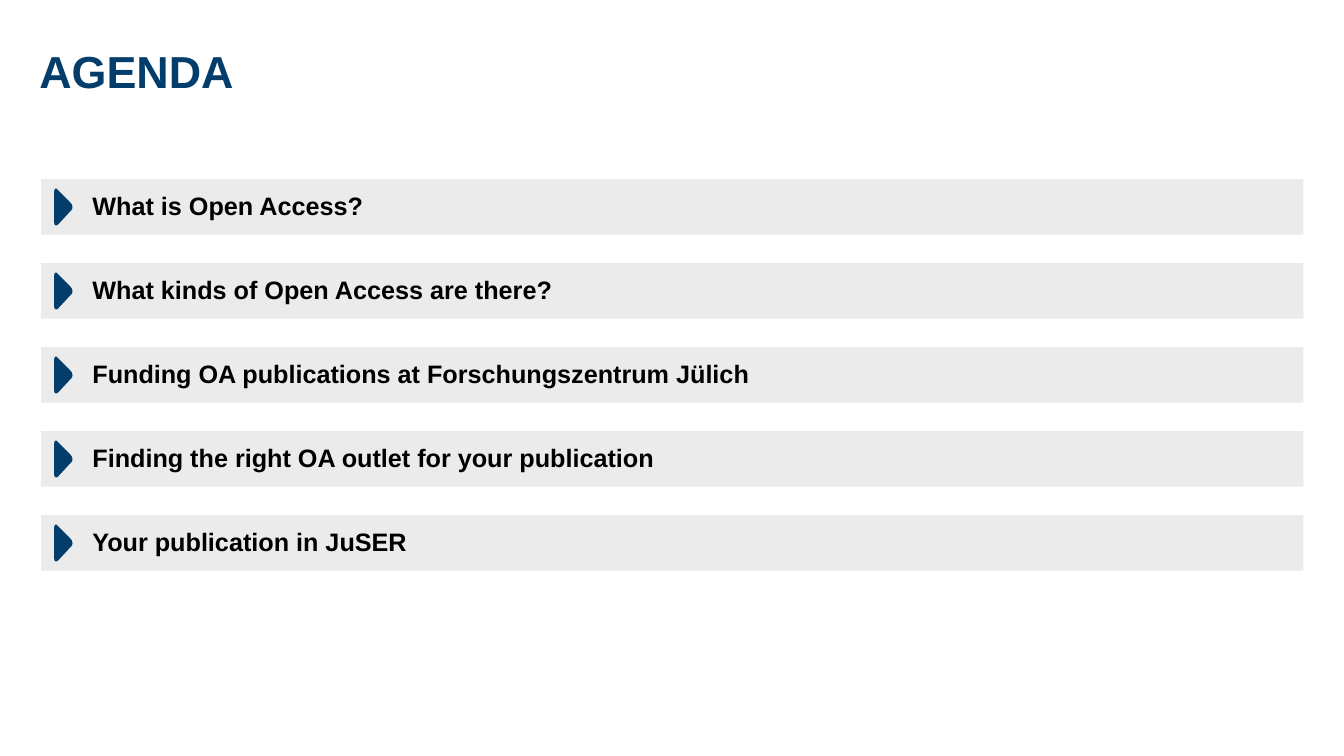
from lxml import etree
from pptx import Presentation
from pptx.dml.color import RGBColor
from pptx.enum.shapes import MSO_SHAPE
from pptx.enum.text import MSO_ANCHOR, PP_ALIGN
from pptx.oxml.ns import qn
from pptx.util import Inches, Pt

RECT = MSO_SHAPE.RECTANGLE
TOP, MIDDLE = MSO_ANCHOR.TOP, MSO_ANCHOR.MIDDLE
LEFT = PP_ALIGN.LEFT
NAVY = RGBColor(0x02, 0x3D, 0x6B)
GREY = RGBColor(0xEB, 0xEB, 0xEB)
BLACK = RGBColor(0, 0, 0)

WIDE, HIGH = 13.33, 7.5
ROW = HIGH / 9
BAR = ROW * 0.66
EDGE, SPAN = WIDE * 0.0305, 12.52
FIRST = HIGH * 0.237

TOPICS = [
    "What is Open Access?",
    "What kinds of Open Access are there?",
    "Funding OA publications at Forschungszentrum Jülich",
    "Finding the right OA outlet for your publication",
    "Your publication in JuSER",
]

# Arrow box and outline in inches; each curve has two handles and an end
ARROW_X, ARROW_Y, ARROW_W, ARROW_H = 0.13, 0.09, 0.19, 0.37
OUTLINE = [
    ("moveTo", [(0, 0.34)]),
    ("cubicBezTo", [(0, 0.37), (0.02, 0.38), (0.04, 0.36)]),
    ("lnTo", [(0.16, 0.23)]),
    ("cubicBezTo", [(0.19, 0.21), (0.19, 0.17), (0.16, 0.14)]),
    ("lnTo", [(0.04, 0.02)]),
    ("cubicBezTo", [(0.02, -0.01), (0, 0), (0, 0.04)]),
    ("close", []),
]


def write(shape, text, size, color, space, anchor, inset):
    frame = shape.text_frame
    frame.text = text
    frame.word_wrap = True
    frame.vertical_anchor = anchor
    (frame.margin_left, frame.margin_top,
     frame.margin_right, frame.margin_bottom) = map(Inches, inset)
    line = frame.paragraphs[0]
    line.alignment = LEFT
    line.line_spacing = space
    font = line.runs[0].font
    font.name, font.size, font.bold = "Arial", Pt(size), True
    font.color.rgb = color


def add_arrow(shapes, x, y):
    """Add a freeform that fills the arrow box, then give it the curved outline."""
    left, top = Inches(x), Inches(y)
    right, base = left + Inches(ARROW_W), top + Inches(ARROW_H)
    pen = shapes.build_freeform(left, top)
    pen.add_line_segments([(right, top), (right, base), (left, base)])
    arrow = pen.convert_to_shape()
    route = next(arrow.element.iter(qn("a:path")))
    for part in list(route):
        route.remove(part)
    for kind, points in OUTLINE:
        part = etree.SubElement(route, qn("a:" + kind))
        for dx, dy in points:
            etree.SubElement(part, qn("a:pt"), x=str(Inches(dx)), y=str(Inches(dy)))
    return arrow


deck = Presentation()
deck.slide_width, deck.slide_height = Inches(WIDE), Inches(HIGH)
slide = deck.slides.add_slide(deck.slide_layouts[6])
shapes = slide.shapes

title = shapes.add_textbox(Inches(0.39), Inches(0.36), Inches(SPAN), Inches(1.23))
write(title, "AGENDA", 32, NAVY, 1.14, TOP, (0, 0, 0, 0))

for row, topic in enumerate(TOPICS):
    y = FIRST + row * ROW
    bar = shapes.add_shape(RECT, Inches(EDGE), Inches(y), Inches(SPAN), Inches(BAR))
    write(bar, topic, 18, BLACK, 0.95, MIDDLE, (0.51, 0.05, 0.1, 0.05))
    arrow = add_arrow(shapes, EDGE + ARROW_X, y + ARROW_Y)

    for shape, color in ((bar, GREY), (arrow, NAVY)):
        shape.shadow.inherit = False
        shape.fill.solid()
        shape.fill.fore_color.rgb = color
        shape.line.fill.background()

deck.save("out.pptx")
